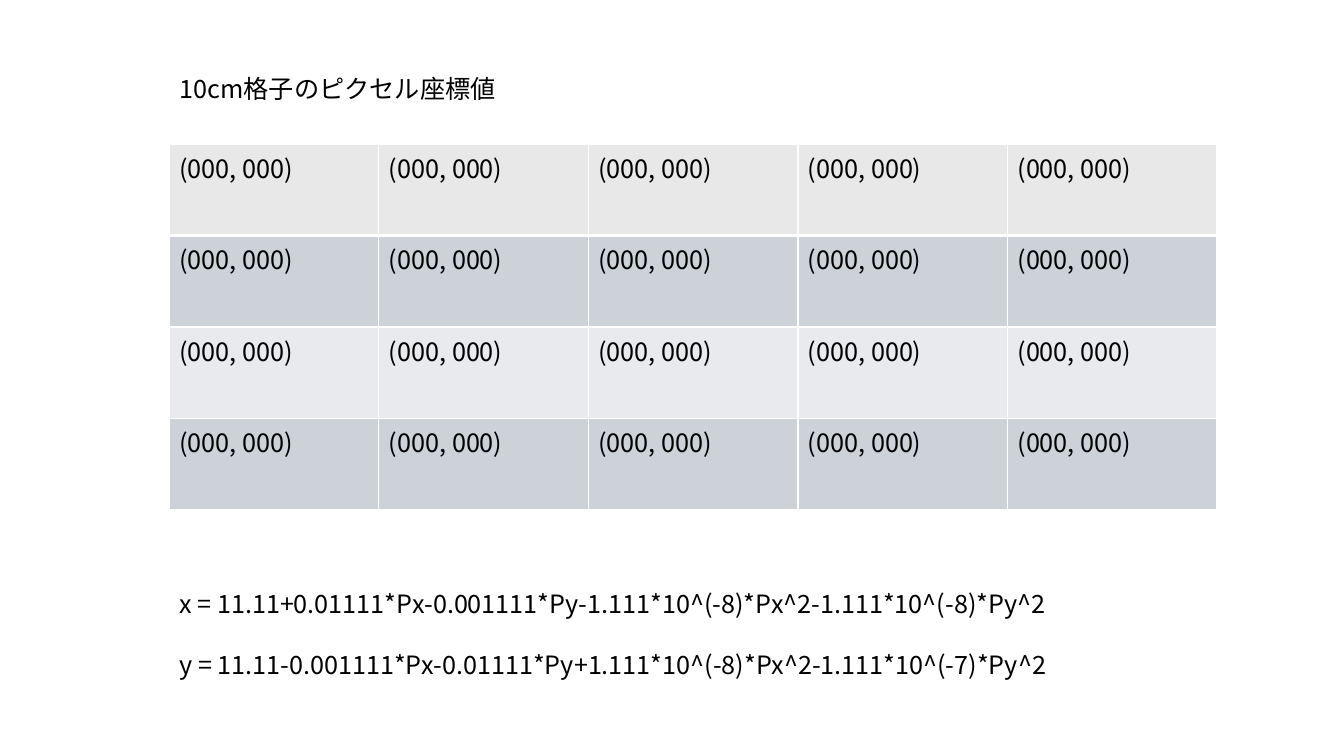
from lxml import etree
from pptx import Presentation
from pptx import util as u
from pptx.dml.color import RGBColor
from pptx.enum import text
from pptx.oxml import ns

FONT = "Noto Sans CJK JP"
BLACK = RGBColor(0x00, 0x00, 0x00)
HEADER_GREY = RGBColor(0xE8, 0xE8, 0xE8)
BAND_DARK = RGBColor(0xCC, 0xD2, 0xD8)
BAND_LIGHT = RGBColor(0xE8, 0xEA, 0xED)
BORDER = "FFFFFF"
LEFT = u.Inches(1.68)
WIDTH = u.Inches(10.39)
LINE_PITCH = u.Pt(21.8)


def add_text(paragraph, words):
    run = paragraph.add_run()
    run.text = words
    run.font.size = u.Pt(18)
    run.font.bold = False
    run.font.name = FONT
    run.font.color.rgb = BLACK
    etree.SubElement(run._r.get_or_add_rPr(), ns.qn("a:ea"), typeface=FONT)


def add_borders(cell, bottom_width):
    properties = cell._tc.get_or_add_tcPr()
    widths = {"L": 1, "R": 1, "T": 1, "B": bottom_width}
    for position, (side, width) in enumerate(widths.items()):
        line = etree.Element(ns.qn(f"a:ln{side}"), w=str(u.Pt(width)))
        fill = etree.SubElement(line, ns.qn("a:solidFill"))
        etree.SubElement(fill, ns.qn("a:srgbClr"), val=BORDER)
        properties.insert(position, line)


presentation = Presentation()
presentation.slide_width = u.Inches(13.33)
presentation.slide_height = u.Inches(7.5)
slide = presentation.slides.add_slide(presentation.slide_layouts[5])

# Heading
heading = slide.shapes.title
heading.left, heading.top = LEFT, u.Inches(0.67)
heading.width, heading.height = u.Inches(5.34), u.Inches(0.4)
heading.text_frame.vertical_anchor = text.MSO_ANCHOR.TOP
heading.text_frame.auto_size = text.MSO_AUTO_SIZE.NONE
heading_line = heading.text_frame.paragraphs[0]
heading_line.alignment = text.PP_ALIGN.LEFT
heading_line.line_spacing = LINE_PITCH
add_text(heading_line, "10cm格子のピクセル座標値")

# Grid of pixel coordinates
row_fills = [HEADER_GREY, BAND_DARK, BAND_LIGHT, BAND_DARK]
grid = slide.shapes.add_table(
    len(row_fills), 5, LEFT, u.Inches(1.43), WIDTH, u.Inches(3.63)
).table
grid.horz_banding = False
for row_number, (row, row_fill) in enumerate(zip(grid.rows, row_fills)):
    for cell in row.cells:
        cell.fill.solid()
        cell.fill.fore_color.rgb = row_fill
        add_borders(cell, 3 if row_number == 0 else 1)
        add_text(cell.text_frame.paragraphs[0], "(000, 000)")

# Conversion formulas
formulas = slide.shapes.add_textbox(LEFT, u.Inches(5.78), WIDTH, u.Inches(1.31)).text_frame
formulas.word_wrap = True
x_line = formulas.paragraphs[0]
y_line = formulas.add_paragraph()
y_line.space_before = LINE_PITCH
for formula_line, formula in (
    (x_line, "x = 11.11+0.01111*Px-0.001111*Py-1.111*10^(-8)*Px^2-1.111*10^(-8)*Py^2"),
    (y_line, "y = 11.11-0.001111*Px-0.01111*Py+1.111*10^(-8)*Px^2-1.111*10^(-7)*Py^2"),
):
    formula_line.line_spacing = LINE_PITCH
    add_text(formula_line, formula)

presentation.save("out.pptx")
